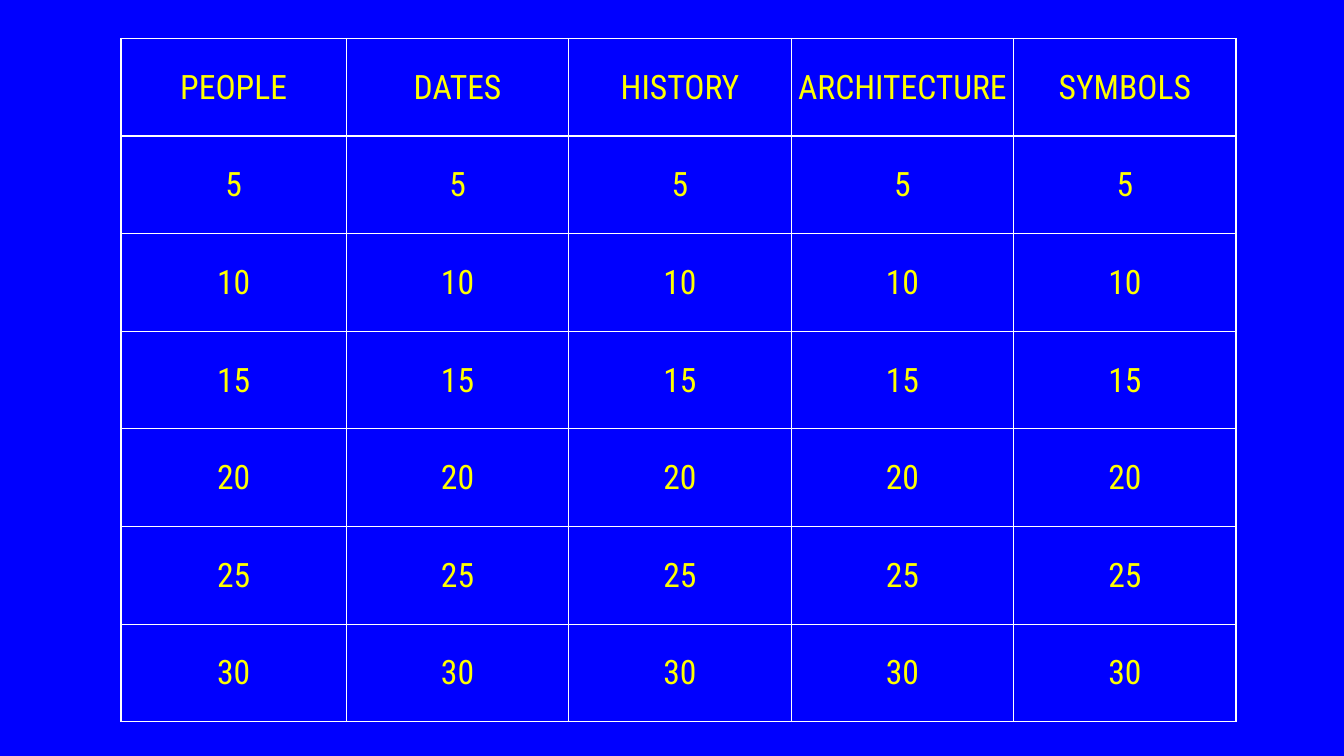
from lxml import etree
from pptx import Presentation
from pptx.dml.color import RGBColor
from pptx.enum.text import MSO_ANCHOR, PP_ALIGN
from pptx.oxml.ns import qn
from pptx.util import Pt

MIDDLE = MSO_ANCHOR.MIDDLE
CENTER = PP_ALIGN.CENTER

BLUE = RGBColor(0x00, 0x00, 0xFF)
YELLOW = RGBColor(0xFF, 0xFF, 0x00)
WHITE = RGBColor(0xFF, 0xFF, 0xFF)

CATEGORIES = ["PEOPLE", "DATES", "HISTORY", "ARCHITECTURE", "SYMBOLS"]
POINT_VALUES = range(5, 31, 5)

BOARD_LEFT, BOARD_TOP = 86.4, 27.4
FIRST_COLUMN, OTHER_COLUMN = 161, 158.9
ROW_HEIGHT = 69.75

CELL_FORMAT = {
    "vertical_anchor": MIDDLE,
    "margin_left": Pt(0.75),
    "margin_right": Pt(0.75),
    "margin_top": Pt(0.75),
    "margin_bottom": Pt(0),
}
FONT_FORMAT = {"name": "Roboto Condensed", "size": Pt(24), "bold": False}


def apply_format(target, values):
    for name, value in values.items():
        setattr(target, name, value)


def add_borders(cell, color, width):
    """Draw all four cell edges; call before filling, as the schema puts lines first."""
    properties = cell._tc.get_or_add_tcPr()
    for side in ("a:lnL", "a:lnR", "a:lnT", "a:lnB"):
        line = etree.SubElement(properties, qn(side), w=str(Pt(width)))
        fill = etree.SubElement(line, qn("a:solidFill"))
        etree.SubElement(fill, qn("a:srgbClr"), val=str(color))


def fill_cell(cell, text):
    apply_format(cell, CELL_FORMAT)
    add_borders(cell, WHITE, 1)
    cell.fill.solid()
    cell.fill.fore_color.rgb = BLUE

    para = cell.text_frame.paragraphs[0]
    para.alignment = CENTER
    span = para.add_run()
    span.text = text
    apply_format(span.font, FONT_FORMAT)
    span.font.color.rgb = YELLOW


def add_board(page, rows):
    widths = [FIRST_COLUMN] + [OTHER_COLUMN] * (len(CATEGORIES) - 1)
    board = page.shapes.add_table(
        len(rows), len(widths), Pt(BOARD_LEFT), Pt(BOARD_TOP),
        Pt(sum(widths)), Pt(ROW_HEIGHT * len(rows)),
    ).table
    apply_format(board, {"first_row": False, "horz_banding": False})
    for column, width in zip(board.columns, widths):
        column.width = Pt(width)
    for row, texts in zip(board.rows, rows):
        row.height = Pt(ROW_HEIGHT)
        for cell, text in zip(row.cells, texts):
            fill_cell(cell, text)


def main():
    deck = Presentation()
    apply_format(deck, {"slide_width": Pt(960), "slide_height": Pt(540)})
    page = deck.slides.add_slide(deck.slide_layouts[6])
    page.background.fill.solid()
    page.background.fill.fore_color.rgb = BLUE

    score_rows = [[str(value)] * len(CATEGORIES) for value in POINT_VALUES]
    add_board(page, [CATEGORIES] + score_rows)
    deck.save("out.pptx")


if __name__ == "__main__":
    main()
